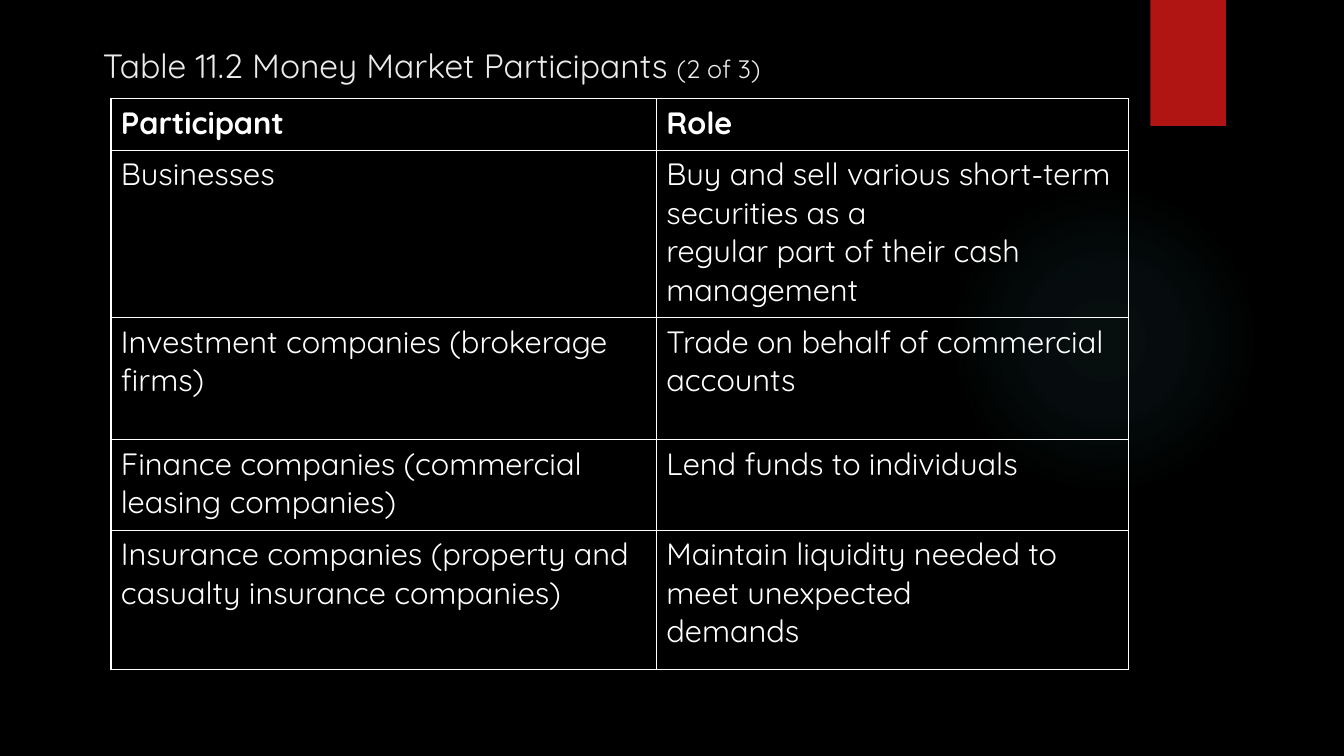
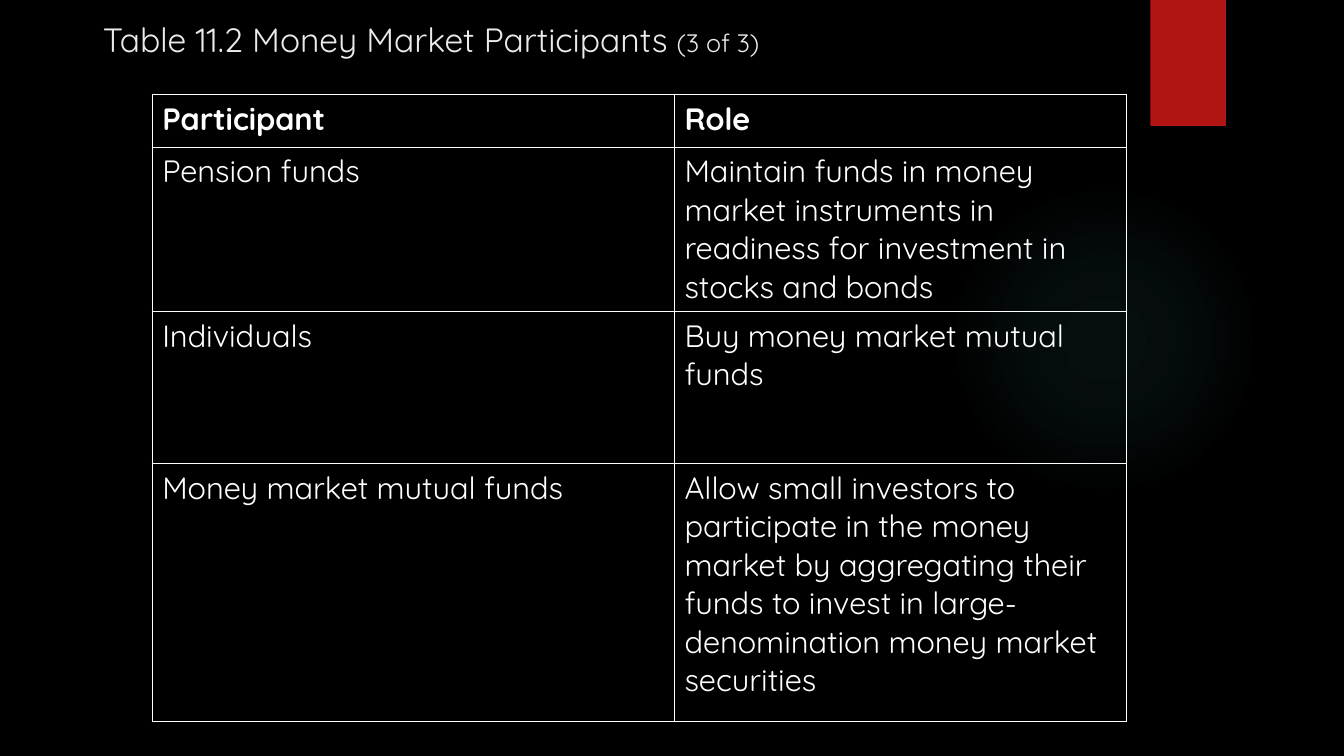
"""Build two slides of money market participants and their roles."""
from lxml import etree
from pptx import Presentation
from pptx.dml.color import RGBColor
from pptx.enum.shapes import MSO_SHAPE
from pptx.enum.text import MSO_ANCHOR, MSO_AUTO_SIZE, PP_ALIGN
from pptx.oxml import parse_xml
from pptx.oxml.ns import nsdecls
from pptx.util import Pt

PX = 9144
FONT = "Quicksand"
BLACK = RGBColor(0x00, 0x00, 0x00)
WHITE = RGBColor(0xFF, 0xFF, 0xFF)
TITLE_GREY = RGBColor(0xEB, 0xEB, 0xEB)
RED = RGBColor(0xB0, 0x15, 0x13)
TEAL = RGBColor(0x50, 0xB9, 0xC1)
OVAL, RECTANGLE = MSO_SHAPE.OVAL, MSO_SHAPE.RECTANGLE
TOP, LEFT, NO_FIT = MSO_ANCHOR.TOP, PP_ALIGN.LEFT, MSO_AUTO_SIZE.NONE

GLOW_STOPS = [(0, 7), (36, 6), (69, 0)]
HEADER = ("Participant", "Role")
PAGES = [
    {
        "number": "(2 of 3)",
        "title_box": (92, 40, 1150, 58),
        "table_corner": (110, 98),
        "columns": (541, 468),
        "heights": (51, 166, 121, 90, 138),
        "rows": [
            HEADER,
            ("Businesses",
             "Buy and sell various short-term securities as a\n"
             "regular part of their cash management"),
            ("Investment companies (brokerage\nfirms)",
             "Trade on behalf of commercial accounts"),
            ("Finance companies (commercial\nleasing companies)",
             "Lend funds to individuals"),
            ("Insurance companies (property and\ncasualty insurance companies)",
             "Maintain liquidity needed to meet unexpected\ndemands"),
        ],
    },
    {
        "number": "(3 of 3)",
        "title_box": (92, 14, 1150, 80),
        "table_corner": (151, 94),
        "columns": (518, 448),
        "heights": (52, 163, 151, 256),
        "rows": [
            HEADER,
            ("Pension funds",
             "Maintain funds in money market instruments in readiness "
             "for investment in stocks and bonds"),
            ("Individuals", "Buy money market mutual funds"),
            ("Money market mutual funds",
             "Allow small investors to participate in the money market by "
             "aggregating their funds to invest in large-denomination "
             "money market securities"),
        ],
    },
]


def write(paragraph, text, size=22, color=WHITE, bold=False):
    run = paragraph.add_run()
    run.text = text
    run.font.name = FONT
    run.font.size = Pt(size)
    run.font.bold = bold
    run.font.color.rgb = color


def add_plain_shape(slide, kind, left, top, width, height):
    shape = slide.shapes.add_shape(kind, left * PX, top * PX, width * PX, height * PX)
    shape.shadow.inherit = False
    shape.line.fill.background()
    return shape


prs = Presentation()
prs.slide_width, prs.slide_height = 1333 * PX, 750 * PX
title_only = prs.slide_layouts[5]
background = prs.slide_master.background.fill
background.solid()
background.fore_color.rgb = BLACK

for page in PAGES:
    slide = prs.slides.add_slide(title_only)

    glow = add_plain_shape(slide, OVAL, 941, 183, 308, 308)
    stops = "".join(
        f'<a:gs pos="{position * 1000}"><a:srgbClr val="{TEAL}">'
        f'<a:alpha val="{opacity * 1000}"/></a:srgbClr></a:gs>'
        for position, opacity in GLOW_STOPS)
    glow.element.spPr.prstGeom.addnext(parse_xml(
        f'<a:gradFill {nsdecls("a")}><a:gsLst>{stops}</a:gsLst><a:path path="circle">'
        '<a:fillToRect l="50000" t="50000" r="50000" b="50000"/></a:path></a:gradFill>'))

    ribbon = add_plain_shape(slide, RECTANGLE, 1141, 0, 75, 125)
    ribbon.fill.solid()
    ribbon.fill.fore_color.rgb = RED

    title = slide.shapes.title
    title.left, title.top, title.width, title.height = (n * PX for n in page["title_box"])
    title.text_frame.auto_size = NO_FIT
    title.text_frame.word_wrap = True
    title.text_frame.vertical_anchor = TOP
    heading = title.text_frame.paragraphs[0]
    heading.alignment = LEFT
    write(heading, "Table 11.2 Money Market Participants ", size=24, color=TITLE_GREY)
    write(heading, page["number"], size=18, color=TITLE_GREY)

    rows, columns, heights = page["rows"], page["columns"], page["heights"]
    left, top = page["table_corner"]
    participants = slide.shapes.add_table(
        len(rows), len(columns), left * PX, top * PX,
        sum(columns) * PX, sum(heights) * PX).table
    participants.horz_banding = False
    for column, width in zip(participants.columns, columns):
        column.width = width * PX
    for r, (height, texts) in enumerate(zip(heights, rows)):
        participants.rows[r].height = height * PX
        for c, text in enumerate(texts):
            cell = participants.cell(r, c)
            cell_format = cell._tc.get_or_add_tcPr()
            for side in ("lnL", "lnR", "lnT", "lnB"):
                cell_format.append(etree.fromstring(
                    f'<a:{side} {nsdecls("a")} w="{Pt(1)}"><a:solidFill>'
                    f'<a:srgbClr val="{WHITE}"/></a:solidFill></a:{side}>'))
            cell.fill.background()
            for i, line in enumerate(text.split("\n")):
                frame = cell.text_frame
                paragraph = frame.add_paragraph() if i else frame.paragraphs[0]
                write(paragraph, line, bold=r == 0)

prs.save("out.pptx")
